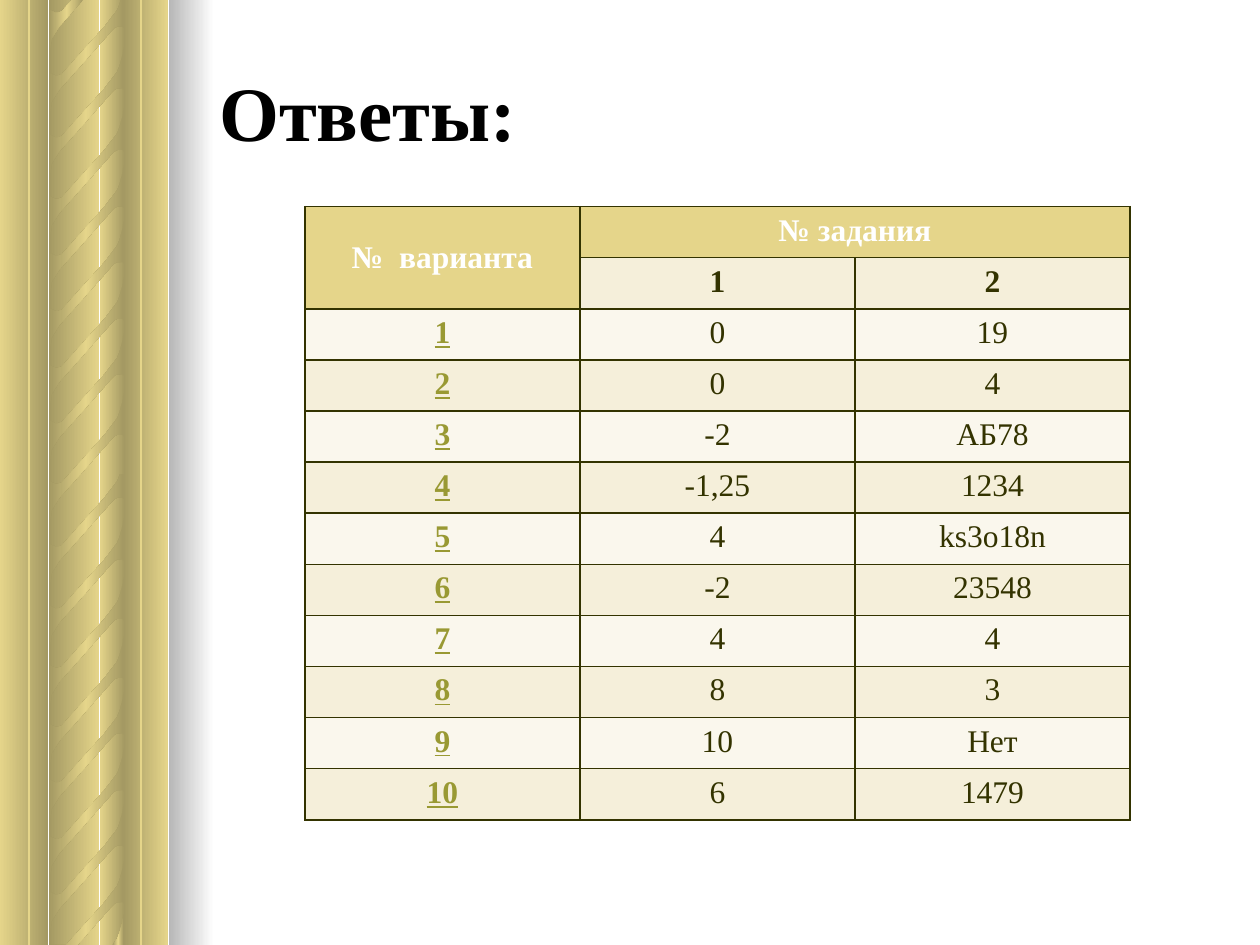
from pptx import Presentation
from pptx.dml.color import RGBColor
from pptx.enum.shapes import MSO_CONNECTOR, MSO_SHAPE
from pptx.enum.text import MSO_ANCHOR, PP_ALIGN
from pptx.oxml import parse_xml
from pptx.oxml.ns import nsdecls, qn
from pptx.util import Pt

FONT = "Times New Roman"
GOLD, WHITE, BLACK = "E5D58A", "FFFFFF", "000000"
INK, LINK = "333300", "999933"
BANDS = ["F5EFDA", "FAF7ED"]
SLIDE_W, SLIDE_H = 720, 540
SHADE = 47000

PANELS = [
    (56.9, 14.4, [0, SHADE]),
    (0, 27.4, [0, SHADE]),
    (28.1, 28.8, [SHADE, 0]),
    (70.6, 25.2, [SHADE, 0]),
]
STRAND_LEFT = 28.1
STRAND = [
    (42.5, 6.5), (42.5, 24.5), (41.8, 23.8), (38.9, 23.8), (37.4, 24.5),
    (35.3, 26.6), (30.2, 32.4), (18, 46.1), (5.8, 59.8), (3.6, 63.4),
    (1.4, 67), (0.7, 72.7), (0, 80.6), (0, 45.4), (0, 49), (0.7, 50.4),
    (2.2, 51.1), (3.6, 51.8), (5, 51.8), (7.2, 51.1), (31.7, 23.8),
    (36.7, 17.3), (38.9, 14.4), (40.3, 10.8), (41.8, 5), (42.5, 0),
]
UPPER_STRANDS = [-43.9, -7.9, 27.4, 62.6, 95, 126.7, 159.1, 190.8, 225.4]
LOWER_STRANDS = [-8, 27.3, 61.2, 95, 126.7, 159.1, 190.8, 223.2, 253.4]

ANSWERS = [
    ("0", "19"), ("0", "4"), ("-2", "АБ78"), ("-1,25", "1234"),
    ("4", "ks3o18n"), ("-2", "23548"), ("4", "4"), ("8", "3"),
    ("10", "Нет"), ("6", "1479"),
]


def color(value):
    return RGBColor.from_string(value)


def shade_across(shape, base, shades):
    stops = ""
    for i, shade in enumerate(shades):
        tint = f'<a:shade val="{shade}"/>' if shade else ""
        position = 100000 * i // (len(shades) - 1)
        stops += f'<a:gs pos="{position}"><a:srgbClr val="{base}">{tint}</a:srgbClr></a:gs>'
    gradient = parse_xml(
        f'<a:gradFill {nsdecls("a")} rotWithShape="1"><a:gsLst>{stops}</a:gsLst>'
        '<a:lin ang="0" scaled="1"/></a:gradFill>')
    shape.fill.gradient()
    properties = shape._element.spPr
    properties.replace(properties.find(qn("a:gradFill")), gradient)
    shape.line.fill.background()
    shape.shadow.inherit = False


def add_panel(slide, left, top, width, height, base, shades):
    panel = slide.shapes.add_shape(
        MSO_SHAPE.RECTANGLE, Pt(left), Pt(top), Pt(width), Pt(height))
    shade_across(panel, base, shades)


def clip(points, limit, side):
    kept = []
    for (x0, y0), (x1, y1) in zip(points, points[1:] + points[:1]):
        inside0, inside1 = side * (y0 - limit) >= 0, side * (y1 - limit) >= 0
        if inside0:
            kept.append((x0, y0))
        if inside0 != inside1:
            kept.append((x0 + (x1 - x0) * (limit - y0) / (y1 - y0), limit))
    return kept


def add_strand(slide, left, top, ceiling):
    outline = [(left + x, top + y) for x, y in STRAND]
    outline = clip(clip(outline, ceiling, 1), SLIDE_H, -1)
    corners = [(Pt(x), Pt(y)) for x, y in outline]
    builder = slide.shapes.build_freeform(*corners[0], scale=1.0)
    builder.add_line_segments(corners[1:], close=True)
    shade_across(builder.convert_to_shape(), GOLD, [SHADE, 0, SHADE])


def add_column_half(slide, top, height, strand_tops):
    for left, width, shades in PANELS:
        add_panel(slide, left, top, width, height, GOLD, shades)
    for offset in strand_tops:
        add_strand(slide, STRAND_LEFT, top + offset, top)


def add_groove(slide, x):
    groove = slide.shapes.add_connector(
        MSO_CONNECTOR.STRAIGHT, Pt(x), 0, Pt(x), Pt(SLIDE_H))
    groove.line.color.rgb = color(GOLD)
    groove.line.width = Pt(1)
    groove._element.spPr.append(parse_xml(f'<a:effectLst {nsdecls("a")}/>'))


def add_column(slide):
    add_column_half(slide, 268.6, 271.4, LOWER_STRANDS)
    add_column_half(slide, -0.7, 271.4, UPPER_STRANDS)
    add_panel(slide, 96.5, 0, 25.9, SLIDE_H, WHITE, [SHADE, 0])
    for x in (16.6, 80.6):
        add_groove(slide, x)


def write(paragraph, words, size, ink, bold=False, underline=False):
    run = paragraph.add_run()
    run.text = words
    font = run.font
    font.name, font.size, font.bold, font.underline = FONT, Pt(size), bold, underline
    font.color.rgb = color(ink)


def add_title(slide, left, top, width, height):
    title = slide.shapes.title
    title.left, title.top, title.width, title.height = map(Pt, (left, top, width, height))
    title.text_frame.vertical_anchor = MSO_ANCHOR.MIDDLE
    heading = title.text_frame.paragraphs[0]
    heading.alignment = PP_ALIGN.LEFT
    write(heading, "Ответы:", 44, BLACK, bold=True)


def style_cell(cell, background):
    properties = cell._tc.get_or_add_tcPr()
    for side in ("lnL", "lnR", "lnT", "lnB"):
        properties.append(parse_xml(
            f'<a:{side} {nsdecls("a")} w="{Pt(1)}"><a:solidFill>'
            f'<a:srgbClr val="{INK}"/></a:solidFill></a:{side}>'))
    cell.fill.solid()
    cell.fill.fore_color.rgb = color(background)


def write_cell(cell, words, ink, bold=False, underline=False):
    paragraph = cell.text_frame.paragraphs[0]
    paragraph.alignment = PP_ALIGN.CENTER
    write(paragraph, words, 18, ink, bold, underline)


def add_answers(slide, left, top, width, height):
    row_count = len(ANSWERS) + 2
    table = slide.shapes.add_table(
        row_count, 3, Pt(left), Pt(top), Pt(width), Pt(height)).table
    table.first_row = table.horz_banding = False
    for row in table.rows:
        row.height = Pt(height / row_count)
    for r in range(row_count):
        for c in range(3):
            is_header = r == 0 or (r == 1 and c == 0)
            style_cell(table.cell(r, c), GOLD if is_header else BANDS[(r + 1) % 2])

    variant = table.cell(0, 0)
    variant.merge(table.cell(1, 0))
    variant.vertical_anchor = MSO_ANCHOR.MIDDLE
    write_cell(variant, "№  варианта", WHITE, bold=True)
    task = table.cell(0, 1)
    task.merge(table.cell(0, 2))
    write_cell(task, "№ задания", WHITE, bold=True)
    for number in (1, 2):
        write_cell(table.cell(1, number), str(number), INK, bold=True)
    for number, answers in enumerate(ANSWERS, 1):
        write_cell(table.cell(number + 1, 0), str(number), LINK, bold=True, underline=True)
        for c, answer in enumerate(answers, 1):
            write_cell(table.cell(number + 1, c), answer, INK)


def main():
    deck = Presentation()
    deck.slide_width, deck.slide_height = Pt(SLIDE_W), Pt(SLIDE_H)
    slide = deck.slides.add_slide(deck.slide_layouts[5])
    add_column(slide)
    add_answers(slide, 174.2, 118.1, 471.6, 350.6)
    add_title(slide, 118.1, 18, 589.7, 90)
    deck.save("out.pptx")


if __name__ == "__main__":
    main()
